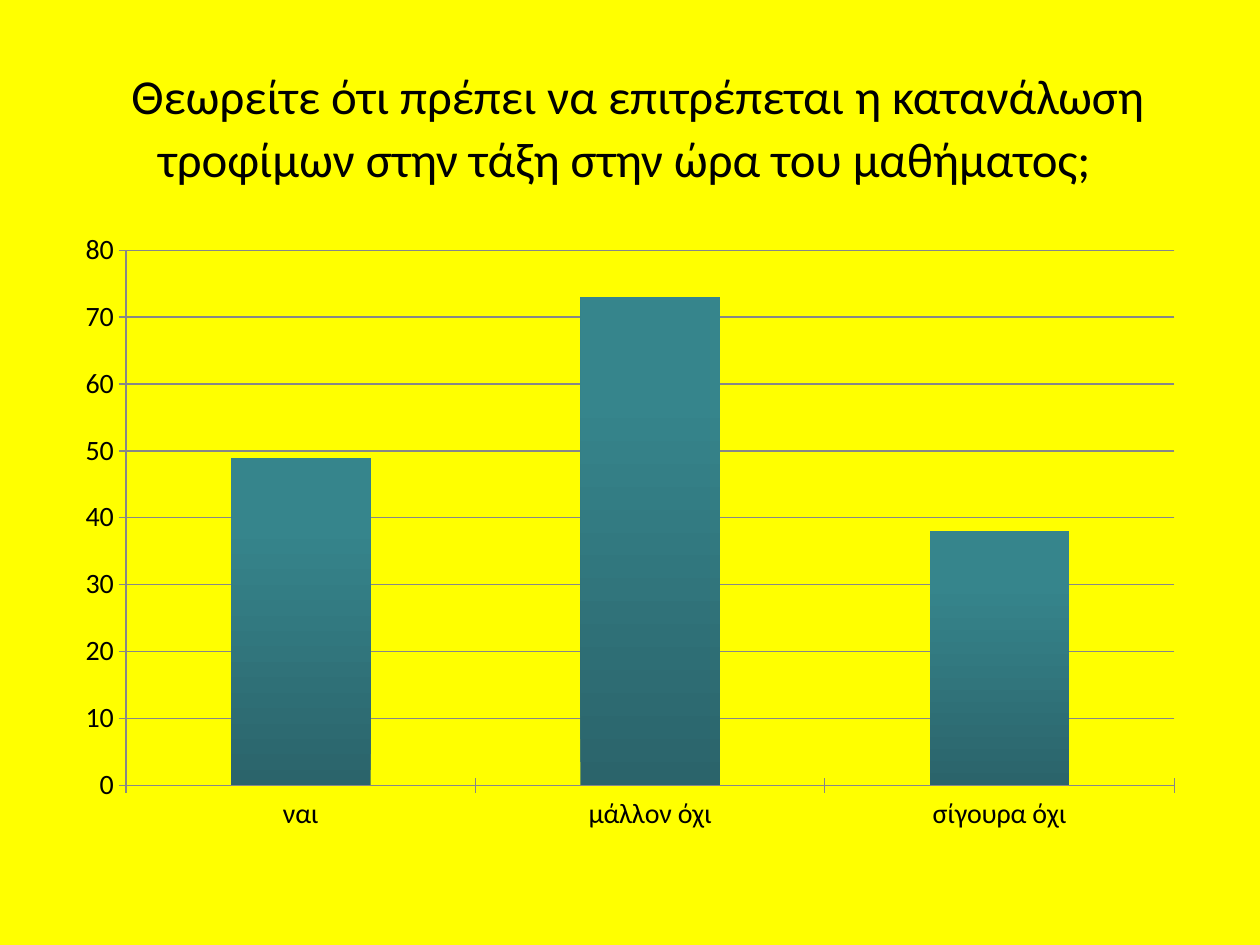
import pptx
import pptx.chart.data
import pptx.dml.color
import pptx.enum.chart
import pptx.enum.text
import pptx.util
from pptx.util import Cm

FONT = "Calibri"
BLACK = "000000"
GRID_GREY = "878787"
ANSWERS = {"ναι": 49, "μάλλον όχι": 73, "σίγουρα όχι": 38}


def rgb(hex_colour):
    return pptx.dml.color.RGBColor.from_string(hex_colour)


def style_font(font, size):
    font.name = FONT
    font.size = pptx.util.Pt(size)
    font.color.rgb = rgb(BLACK)


def write_question(slide):
    question = slide.shapes.title
    question.left, question.top = Cm(1.27), Cm(0.76)
    question.width, question.height = Cm(22.86), Cm(3.18)
    frame = question.text_frame
    frame.word_wrap = True
    frame.vertical_anchor = pptx.enum.text.MSO_ANCHOR.MIDDLE
    line = frame.paragraphs[0]
    line.alignment = pptx.enum.text.PP_ALIGN.CENTER
    # The larger lead-in space sets the height of the first line
    for words, size in (
        (" ", 39.6),
        ("Θεωρείτε ότι πρέπει να επιτρέπεται η κατανάλωση "
         "τροφίμων στην τάξη στην ώρα του μαθήματος; ", 27.9),
    ):
        run = line.add_run()
        run.text = words
        style_font(run.font, size)


def style_axis(axis):
    axis.major_tick_mark = pptx.enum.chart.XL_TICK_MARK.CROSS
    axis.minor_tick_mark = pptx.enum.chart.XL_TICK_MARK.NONE
    axis.format.line.color.rgb = rgb(GRID_GREY)
    axis.format.line.width = pptx.util.Pt(0.75)


def add_answer_chart(slide):
    answers = pptx.chart.data.CategoryChartData()
    answers.categories = list(ANSWERS)
    answers.add_series("Series 1", list(ANSWERS.values()))
    chart = slide.shapes.add_chart(
        pptx.enum.chart.XL_CHART_TYPE.COLUMN_CLUSTERED,
        Cm(1.27), Cm(4.45), Cm(22.86), Cm(12.57), answers).chart
    chart.has_legend = False
    chart.has_title = False
    style_font(chart.font, 16)

    # Axes and gridlines
    for axis in (chart.category_axis, chart.value_axis):
        style_axis(axis)
    scale = chart.value_axis
    scale.minimum_scale, scale.maximum_scale, scale.major_unit = 0, 80, 10
    scale.has_major_gridlines = True
    scale.major_gridlines.format.line.color.rgb = rgb(GRID_GREY)
    scale.major_gridlines.format.line.width = pptx.util.Pt(0.75)

    # Teal columns, darker towards the base
    columns = chart.plots[0]
    columns.gap_width = 150
    columns.vary_by_categories = False
    fill = columns.series[0].format.fill
    fill.gradient()
    fill.gradient_angle = 90
    for stop, colour, position in zip(
            fill.gradient_stops, ("2B646B", "36858C"), (0, 0.8)):
        stop.color.rgb = rgb(colour)
        stop.position = position


def main():
    deck = pptx.Presentation()
    deck.slide_width, deck.slide_height = Cm(25.4), Cm(19.05)
    slide = deck.slides.add_slide(deck.slide_layouts[5])
    slide.background.fill.solid()
    slide.background.fill.fore_color.rgb = rgb("FFFF00")
    write_question(slide)
    add_answer_chart(slide)
    deck.save("out.pptx")


if __name__ == "__main__":
    main()
